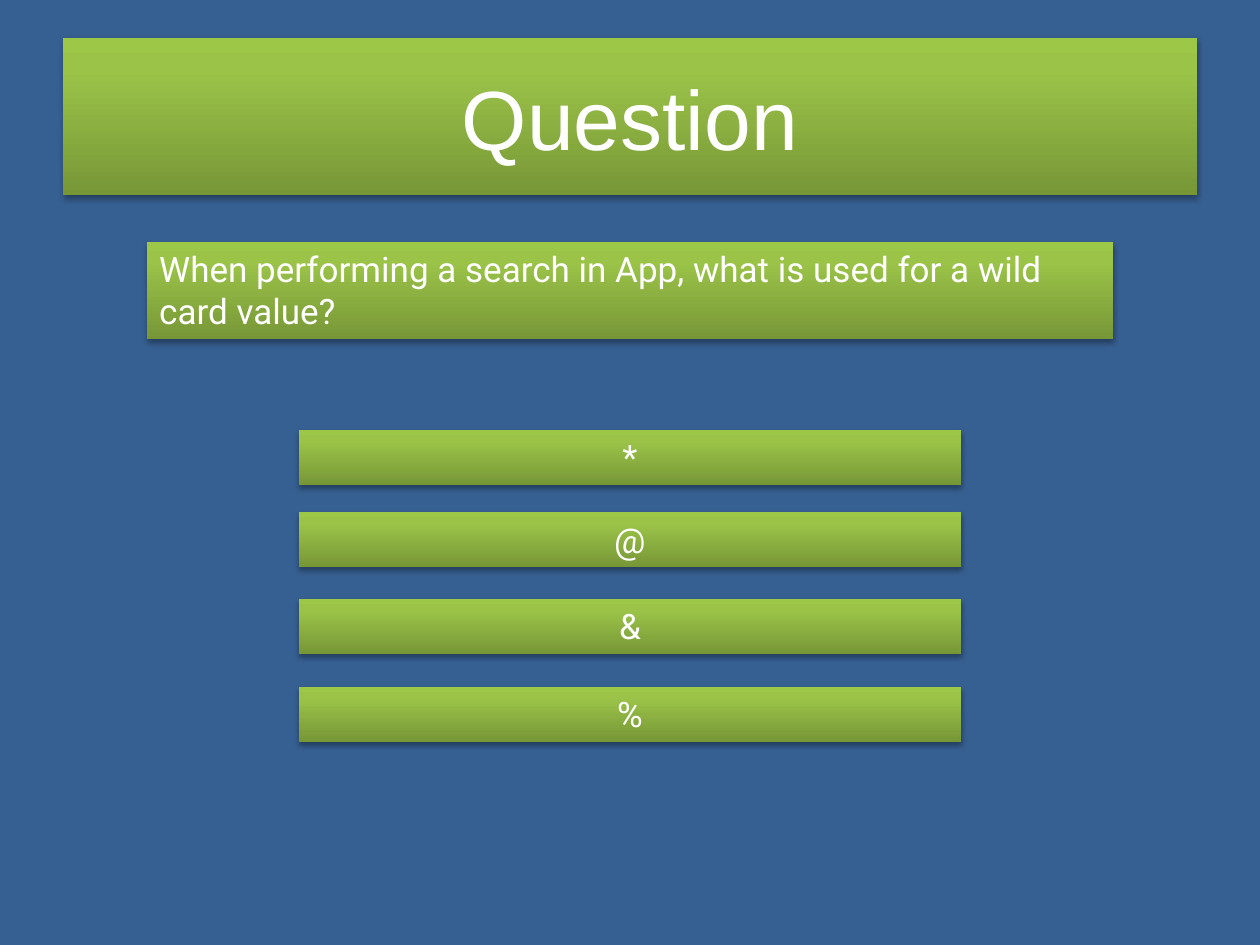
from pptx import Presentation
from pptx.dml.color import RGBColor
from pptx.enum.shapes import MSO_SHAPE as Preset
from pptx.enum.text import MSO_ANCHOR as Anchor, MSO_AUTO_SIZE as AutoSize, PP_ALIGN as Align
from pptx.oxml import parse_xml
from pptx.util import Cm, Pt

THEME = {
    "background": RGBColor.from_string("376092"),
    "text": RGBColor.from_string("FFFFFF"),
    "gradient": [(0, "779737"), (80, "9BC348"), (100, "9DC746")],
    "shadow": "000000",
    "title": {"name": "Arial", "size": Pt(48)},
    "body": {"name": "Roboto", "size": Pt(20)},
}
NAMESPACE = 'xmlns:a="http://schemas.openxmlformats.org/drawingml/2006/main"'


def style_box(shape):
    """Green gradient rising from the bottom, no outline, soft shadow below."""
    stops = "".join(
        f'<a:gs pos="{position * 1000}"><a:srgbClr val="{color}"/></a:gs>'
        for position, color in THEME["gradient"]
    )
    properties = shape._element.spPr
    properties.append(parse_xml(
        f'<a:gradFill {NAMESPACE} rotWithShape="1"><a:gsLst>{stops}</a:gsLst>'
        '<a:lin ang="16200000" scaled="0"/></a:gradFill>'))
    shape.line.fill.background()
    properties.append(parse_xml(
        f'<a:effectLst {NAMESPACE}><a:outerShdw blurRad="{Pt(3.1)}" dist="{Pt(1.8)}" '
        f'dir="5400000" rotWithShape="0"><a:srgbClr val="{THEME["shadow"]}">'
        '<a:alpha val="35000"/></a:srgbClr></a:outerShdw></a:effectLst>'))


def add_box(slide, text, bounds, font, align, anchor, auto_size):
    shape = slide.shapes.add_shape(Preset.RECTANGLE, *map(Cm, bounds))
    style_box(shape)
    frame = shape.text_frame
    frame_format = {"word_wrap": True, "vertical_anchor": anchor, "auto_size": auto_size}
    for name, value in frame_format.items():
        setattr(frame, name, value)
    paragraph = frame.paragraphs[0]
    paragraph.alignment = align
    run = paragraph.add_run()
    run.text = text
    for name, value in font.items():
        setattr(run.font, name, value)
    run.font.color.rgb = THEME["text"]


# Slide and background
presentation = Presentation()
presentation.slide_width, presentation.slide_height = Cm(25.4), Cm(19.05)
slide = presentation.slides.add_slide(presentation.slide_layouts[6])
slide.background.fill.solid()
slide.background.fill.fore_color.rgb = THEME["background"]

# Title
add_box(slide, "Question", (1.27, 0.76, 22.86, 3.18),
        THEME["title"], Align.CENTER, Anchor.MIDDLE, AutoSize.NONE)

# Question
add_box(slide, "When performing a search in App, what is used for a wild card value?",
        (2.96, 4.87, 19.48, 1.97),
        THEME["body"], Align.LEFT, Anchor.TOP, AutoSize.SHAPE_TO_FIT_TEXT)

# Answers
for answer, top in zip("*@&%", (8.66, 10.32, 12.07, 13.84)):
    add_box(slide, answer, (6.03, top, 13.34, 1.11),
            THEME["body"], Align.CENTER, Anchor.TOP, AutoSize.SHAPE_TO_FIT_TEXT)

presentation.save("out.pptx")
